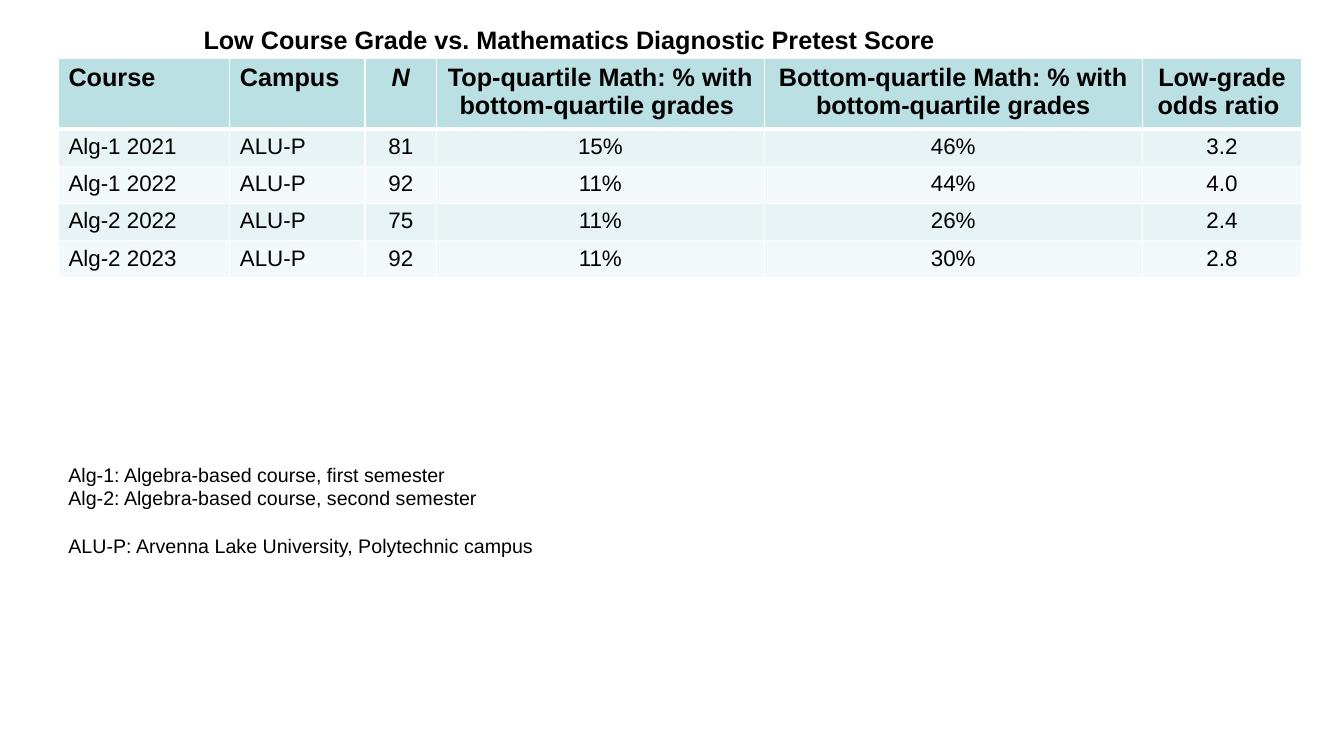
from dataclasses import dataclass

from lxml import etree
from pptx import Presentation
from pptx.dml.color import RGBColor
from pptx.enum.text import MSO_ANCHOR, PP_ALIGN
from pptx.oxml.ns import qn
from pptx.util import Inches, Pt

LEFT, CENTER = PP_ALIGN.LEFT, PP_ALIGN.CENTER
TOP = MSO_ANCHOR.TOP


@dataclass(frozen=True)
class Theme:
    font: str = "Arial"
    ink: str = "000000"
    header_fill: str = "BBE0E3"
    bands: tuple = ("E7F3F4", "F3F9FA")
    border: str = "FFFFFF"
    thin: float = 1
    thick: float = 3
    heading: float = 18
    body: float = 16
    note: float = 14


THEME = Theme()
PAGE_WIDTH, PAGE_HEIGHT = 13.33, 7.5
MARGIN = 0.58

# Grid of the results table, in inches
COLUMN_WIDTHS = (1.7, 1.34, 0.71, 3.25, 3.75, 1.58)
HEADER_HEIGHT, ROW_HEIGHT = 0.7, 0.37
COLUMN_ALIGNS = (LEFT, LEFT, CENTER, CENTER, CENTER, CENTER)

TITLE = "Low Course Grade vs. Mathematics Diagnostic Pretest Score"
HEADERS = (
    "Course", "Campus", "N",
    "Top-quartile Math: % with bottom-quartile grades ",
    "Bottom-quartile Math: % with bottom-quartile grades",
    "Low-grade odds ratio ",
)
RESULTS = (
    ("Alg-1 2021", "ALU-P", "81", "15%", "46%", "3.2"),
    ("Alg-1 2022", "ALU-P", "92", "11%", "44%", "4.0"),
    ("Alg-2 2022", "ALU-P", "75", "11%", "26%", "2.4"),
    ("Alg-2 2023", "ALU-P", "92", "11%", "30%", "2.8"),
)
# Each note with the space before it, in points
NOTES = (
    ("Alg-1: Algebra-based course, first semester", 0),
    ("Alg-2: Algebra-based course, second semester", 0),
    ("ALU-P: Arvenna Lake University, Polytechnic campus", 17),
)


def write(para, text, size, **extra):
    """Fill one paragraph with a formatted run."""
    span = para.add_run()
    span.text = text
    formats = {"name": THEME.font, "size": Pt(size), **extra}
    for name, value in formats.items():
        setattr(span.font, name, value)
    span.font.color.rgb = RGBColor.from_string(THEME.ink)


def add_text(page, lines, size, left, top, width, height, margin_top=0.05, **extra):
    """Add a wrapped text box; lines are pairs of text and space before."""
    box = page.shapes.add_textbox(*map(Inches, (left, top, width, height)))
    frame = box.text_frame
    frame.word_wrap = True
    frame.margin_top = Inches(margin_top)
    for index, (text, gap) in enumerate(lines):
        para = frame.add_paragraph() if index else frame.paragraphs[0]
        para.space_before = Pt(gap)
        write(para, text, size, **extra)


def set_borders(cell, top, bottom):
    """Draw the four cell borders, ahead of the cell fill."""
    properties = cell._tc.get_or_add_tcPr()
    widths = {"L": THEME.thin, "R": THEME.thin, "T": top, "B": bottom}
    for index, (side, width) in enumerate(widths.items()):
        line = etree.Element(qn(f"a:ln{side}"), w=str(Pt(width)))
        fill = etree.SubElement(line, qn("a:solidFill"))
        etree.SubElement(fill, qn("a:srgbClr"), val=THEME.border)
        properties.insert(index, line)


def fill_cell(cell, text, row, column):
    """Style one cell according to its row and column."""
    is_header = row == 0
    color = THEME.header_fill if is_header else THEME.bands[(row - 1) % 2]
    cell.fill.solid()
    cell.fill.fore_color.rgb = RGBColor.from_string(color)
    cell.vertical_anchor = TOP
    para = cell.text_frame.paragraphs[0]
    para.alignment = COLUMN_ALIGNS[column]
    write(para, text, THEME.heading if is_header else THEME.body,
          bold=is_header, italic=text == "N")
    set_borders(cell,
                top=THEME.thick if row == 1 else THEME.thin,
                bottom=THEME.thick if is_header else THEME.thin)


def add_results(page, left, top):
    """Add the results table on its column and row grid."""
    rows = (HEADERS, *RESULTS)
    heights = [HEADER_HEIGHT] + [ROW_HEIGHT] * len(RESULTS)
    table = page.shapes.add_table(
        len(rows), len(HEADERS), Inches(left), Inches(top),
        Inches(sum(COLUMN_WIDTHS)), Inches(sum(heights))).table
    table.first_row = True
    table.horz_banding = False
    for column, width in zip(table.columns, COLUMN_WIDTHS):
        column.width = Inches(width)
    for row, (texts, height) in enumerate(zip(rows, heights)):
        table.rows[row].height = Inches(height)
        for column, text in enumerate(texts):
            fill_cell(table.cell(row, column), text, row, column)


def main():
    deck = Presentation()
    deck.slide_width, deck.slide_height = Inches(PAGE_WIDTH), Inches(PAGE_HEIGHT)
    page = deck.slides.add_slide(deck.slide_layouts[6])

    # Results table
    add_results(page, MARGIN, MARGIN)

    # Title above the table
    add_text(page, [(TITLE, 0)], THEME.heading, 1.92, 0.19, 9.31, 0.4, bold=True)

    # Key to the abbreviations
    add_text(page, NOTES, THEME.note, MARGIN, 4.24, 6.25, 1.35, margin_top=0.35)

    deck.save("out.pptx")


if __name__ == "__main__":
    main()
